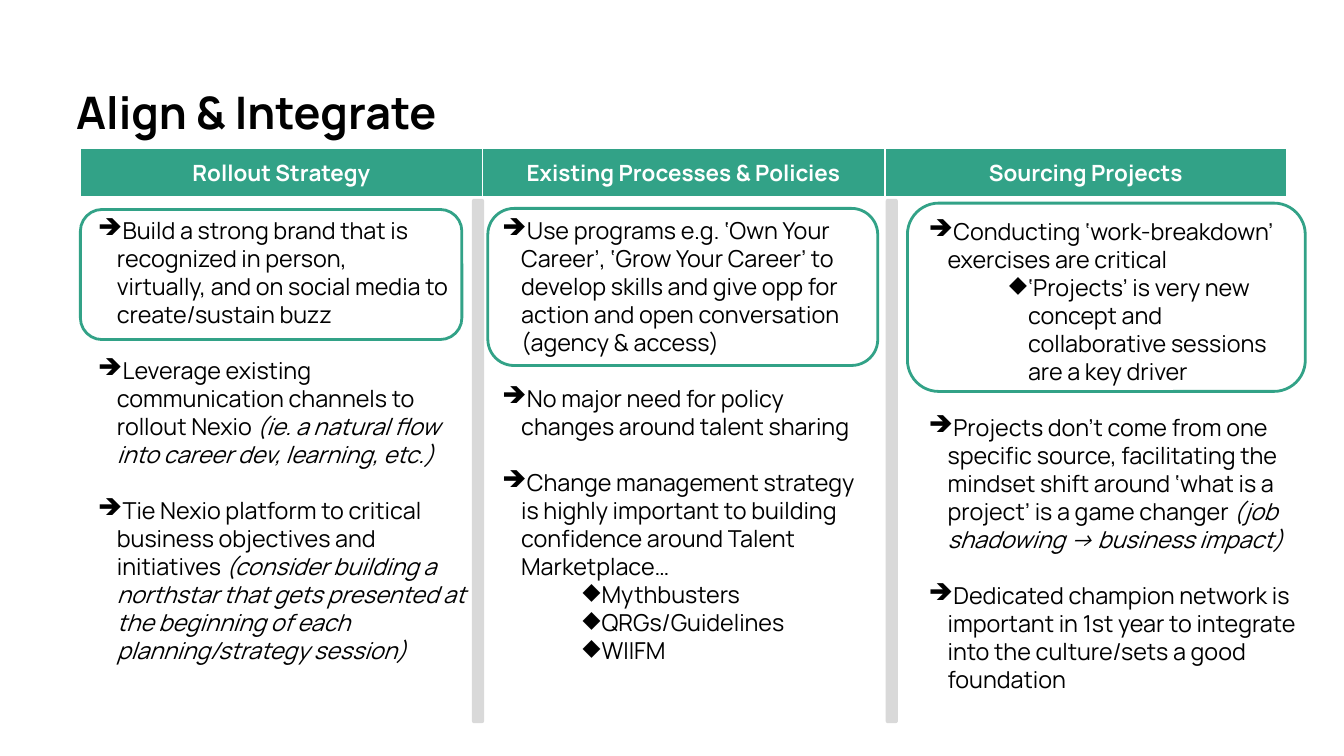
from lxml.etree import SubElement
from pptx import Presentation
from pptx.dml.color import RGBColor
from pptx.enum.shapes import MSO_SHAPE as Shape
from pptx.enum.text import MSO_ANCHOR as Anchor, PP_ALIGN as Align
from pptx.oxml.ns import qn
from pptx.util import Cm, Pt

COLORS = {"green": "32A287", "gray": "D9D9D9", "black": "000000", "white": "FFFFFF"}
FONT = "Manrope"
INSET = 0.25
LINE_GAP = 15
BULLETS = [("➔", 0.51), ("◆", 2.03)]
HANGING = 0.36

HEADINGS = ["Rollout Strategy", "Existing Processes & Policies", "Sourcing Projects"]

# Each point: level, whether a gap precedes it, plain text, italic text
COLUMNS = [
    {"box": (1.45, 3.84, 7.7, 9.07), "highlight": (0.07, 0.12, 7.21, 2.46), "points": [
        (0, False, "Build a strong brand that is recognized in person, \n"
                   "virtually, and on social media to create/sustain buzz", ""),
        (0, True, "Leverage existing communication channels to rollout Nexio ",
         "(ie. a natural flow into career dev, learning, etc.)"),
        (0, True, "Tie Nexio platform to critical business objectives and initiatives ",
         "(consider building a northstar that gets presented at the beginning of each "
         "planning/strategy session)"),
    ]},
    {"box": (9.09, 3.84, 7.7, 10.4), "highlight": (0.13, 0.1, 7.37, 2.97), "points": [
        (0, False, "Use programs e.g. ‘Own Your Career’, ‘Grow Your Career’ to develop skills "
                   "and give opp for action and open conversation (agency & access)", ""),
        (0, True, "No major need for policy changes around talent sharing", ""),
        (0, True, "Change management strategy is highly important to building confidence "
                  "around Talent Marketplace…", ""),
        (1, False, "Mythbusters", ""),
        (1, False, "QRGs/Guidelines", ""),
        (1, False, "WIIFM", ""),
    ]},
    {"box": (17.15, 3.86, 7.7, 10.13), "highlight": (0, -0.02, 7.52, 3.56), "points": [
        (0, False, "Conducting ‘work-breakdown’ exercises are critical", ""),
        (1, False, "‘Projects’ is very new concept and collaborative sessions are a key driver", ""),
        (0, True, "Projects don’t come from one specific source, facilitating the mindset shift "
                  "around ‘what is a project’ is a game changer ",
         "(job shadowing → business impact)"),
        (0, True, "Dedicated champion network is important in 1st year to integrate into the "
                  "culture/sets a good foundation", ""),
    ]},
]


def color(name):
    return RGBColor.from_string(COLORS[name])


def lengths(box):
    return [Cm(value) for value in box]


def write(paragraph, text, size=12.5, ink="black", bold=False, italic=False):
    """Append formatted text, turning each newline into a line break."""
    for number, line in enumerate(text.split("\n")):
        if number:
            paragraph.add_line_break()
        run = paragraph.add_run()
        run.text = line
        run.font.name = FONT
        run.font.size = Pt(size)
        run.font.bold = bold
        run.font.italic = italic
        run.font.color.rgb = color(ink)


def set_margins(frame):
    frame.word_wrap = True
    frame.margin_left = frame.margin_right = Cm(INSET)
    frame.margin_top = frame.margin_bottom = Cm(INSET)


def add_bullet(paragraph, level):
    mark, indent = BULLETS[level]
    paragraph.level = level
    properties = paragraph._p.get_or_add_pPr()
    properties.set("marL", str(Cm(indent)))
    properties.set("indent", str(-Cm(HANGING)))
    tint = SubElement(properties, qn("a:buClr"))
    SubElement(tint, qn("a:srgbClr")).set("val", COLORS["black"])
    SubElement(properties, qn("a:buChar")).set("char", mark)


def add_rounded(slide, box, fill=None, line=None):
    panel = slide.shapes.add_shape(Shape.ROUNDED_RECTANGLE, *lengths(box))
    panel.shadow.inherit = False
    if fill:
        panel.fill.solid()
        panel.fill.fore_color.rgb = color(fill)
    else:
        panel.fill.background()
    if line:
        panel.line.color.rgb = color(line)
        panel.line.width = Pt(1.5)
    else:
        panel.line.fill.background()


def add_title(slide, box, text):
    title = slide.shapes.title
    title.left, title.top, title.width, title.height = lengths(box)
    frame = title.text_frame
    set_margins(frame)
    frame.vertical_anchor = Anchor.MIDDLE
    frame.paragraphs[0].alignment = Align.LEFT
    write(frame.paragraphs[0], text, size=24, bold=True)


def add_heading_bar(slide, box, headings):
    table = slide.shapes.add_table(1, len(headings), *lengths(box)).table
    for cell, heading in zip(table.rows[0].cells, headings):
        cell.fill.solid()
        cell.fill.fore_color.rgb = color("green")
        cell.vertical_anchor = Anchor.MIDDLE
        cell.margin_top = cell.margin_bottom = 0
        paragraph = cell.text_frame.paragraphs[0]
        paragraph.alignment = Align.CENTER
        write(paragraph, heading, size=12, ink="white", bold=True)


def add_column(slide, box, highlight, points):
    """Place bulleted points and the outline around the leading ones."""
    frame = slide.shapes.add_textbox(*lengths(box)).text_frame
    set_margins(frame)
    for number, (level, gap, plain, aside) in enumerate(points):
        paragraph = frame.add_paragraph() if number else frame.paragraphs[0]
        add_bullet(paragraph, level)
        if gap:
            paragraph.space_before = Pt(LINE_GAP)
        write(paragraph, plain)
        if aside:
            write(paragraph, aside, italic=True)
    left, top, width, height = highlight
    add_rounded(slide, (box[0] + left, box[1] + top, width, height), line="green")


def main():
    deck = Presentation()
    deck.slide_width, deck.slide_height = Cm(25.4), Cm(14.29)
    slide = deck.slides.add_slide(deck.slide_layouts[5])
    add_title(slide, (1.19, 1.4, 23.01, 1.42), "Align & Integrate")
    add_heading_bar(slide, (1.52, 2.8, 22.8, 0.92), HEADINGS)
    for left in (8.92, 16.74):
        add_rounded(slide, (left, 3.76, 0.23, 9.91), fill="gray")
    for column in COLUMNS:
        add_column(slide, **column)
    deck.save("out.pptx")


if __name__ == "__main__":
    main()
